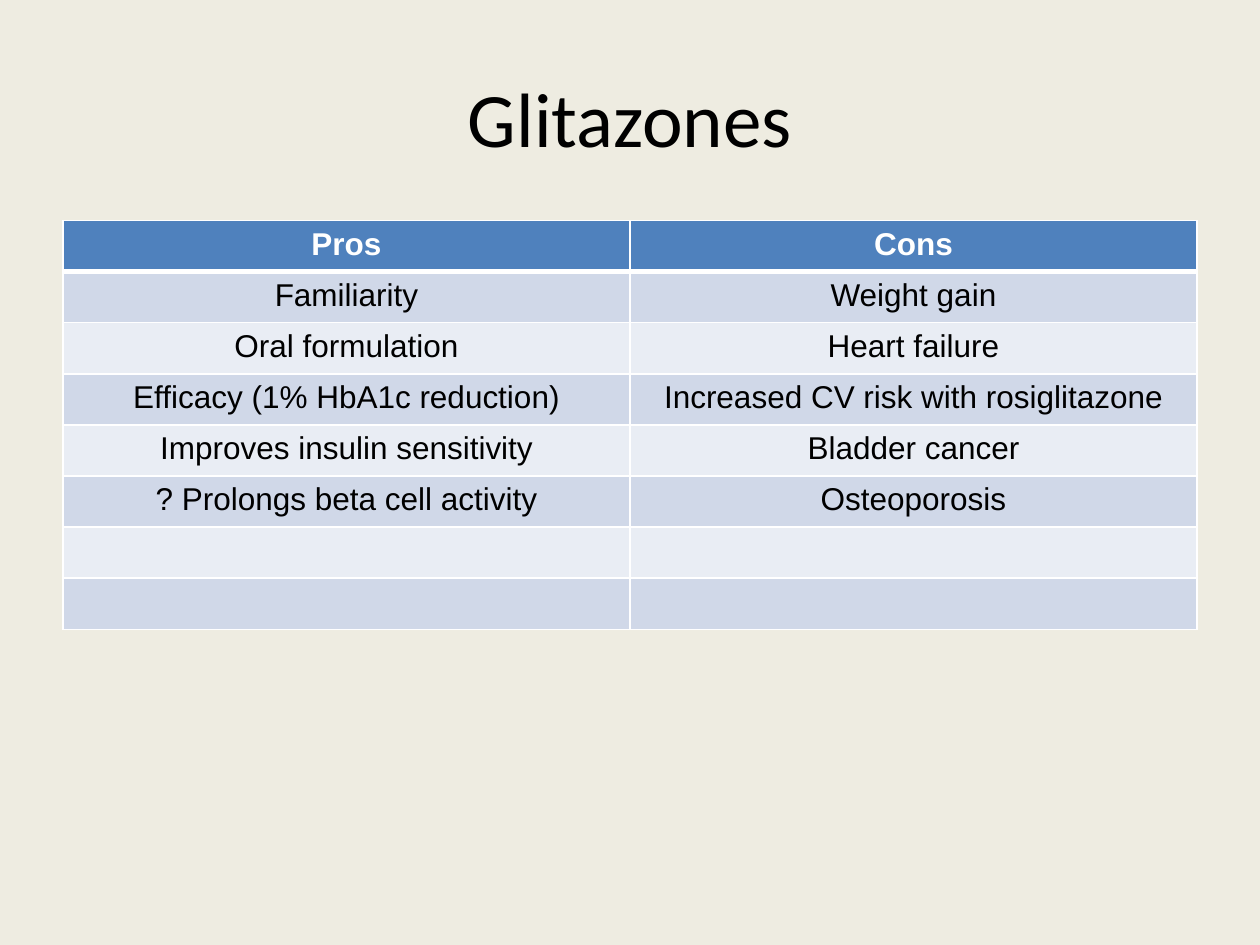
"""Build a slide weighing the pros and cons of glitazones."""
import pptx
import pptx.dml.color
import pptx.enum.text
import pptx.oxml
import pptx.oxml.ns
import pptx.util

Pt = pptx.util.Pt
RGBColor = pptx.dml.color.RGBColor

CREAM = RGBColor(0xEE, 0xEC, 0xE1)
BLACK = RGBColor(0x00, 0x00, 0x00)
WHITE = RGBColor(0xFF, 0xFF, 0xFF)
HEADER_BLUE = RGBColor(0x4F, 0x81, 0xBD)
BANDS = (RGBColor(0xD0, 0xD8, 0xE8), RGBColor(0xE9, 0xED, 0xF4))

TITLE_FONT = {"name": "Calibri", "size": Pt(44), "bold": False}
HEADER_FONT = {"name": "Arial", "size": Pt(18), "bold": True}
BODY_FONT = {**HEADER_FONT, "bold": False}

ROW_HEIGHT = 29.2
COLUMN_WIDTH = 324
ARGUMENTS = [
    ("Pros", "Cons"),
    ("Familiarity", "Weight gain"),
    ("Oral formulation", "Heart failure"),
    ("Efficacy (1% HbA1c reduction)", "Increased CV risk with rosiglitazone"),
    ("Improves insulin sensitivity", "Bladder cancer"),
    ("? Prolongs beta cell activity", "Osteoporosis"),
    ("", ""),
    ("", ""),
]


def write_centred(frame, wording, font_format, color):
    paragraph = frame.paragraphs[0]
    paragraph.alignment = pptx.enum.text.PP_ALIGN.CENTER
    if wording:
        run = paragraph.add_run()
        run.text = wording
        for attribute, value in font_format.items():
            setattr(run.font, attribute, value)
        run.font.color.rgb = color


def add_title(slide, wording):
    frame = slide.shapes.add_textbox(Pt(36), Pt(21.6), Pt(648), Pt(90)).text_frame
    frame.word_wrap = True
    frame.vertical_anchor = pptx.enum.text.MSO_ANCHOR.MIDDLE
    write_centred(frame, wording, TITLE_FONT, BLACK)


def add_borders(cell, widths):
    properties = cell._tc.get_or_add_tcPr()
    for side, width in widths.items():
        properties.append(pptx.oxml.parse_xml(
            f'<a:ln{side} {pptx.oxml.ns.nsdecls("a")} w="{Pt(width)}">'
            f'<a:solidFill><a:srgbClr val="{WHITE}"/></a:solidFill></a:ln{side}>'
        ))


def style_cell(cell, wording, row):
    is_header = row == 0
    add_borders(cell, {"L": 1, "R": 1, "T": 3 if row == 1 else 1, "B": 3 if is_header else 1})
    cell.fill.solid()
    cell.fill.fore_color.rgb = HEADER_BLUE if is_header else BANDS[(row - 1) % 2]
    font_format, color = (HEADER_FONT, WHITE) if is_header else (BODY_FONT, BLACK)
    write_centred(cell.text_frame, wording, font_format, color)


def add_arguments_table(slide, arguments):
    rows, columns = len(arguments), len(arguments[0])
    table = slide.shapes.add_table(
        rows, columns, Pt(36), Pt(126), Pt(columns * COLUMN_WIDTH), Pt(rows * ROW_HEIGHT)
    ).table
    for row, wordings in enumerate(arguments):
        table.rows[row].height = Pt(ROW_HEIGHT)
        for column, wording in enumerate(wordings):
            style_cell(table.cell(row, column), wording, row)


def main():
    deck = pptx.Presentation()
    deck.slide_width, deck.slide_height = Pt(720), Pt(540)
    slide = deck.slides.add_slide(deck.slide_layouts[6])
    slide.background.fill.solid()
    slide.background.fill.fore_color.rgb = CREAM
    add_title(slide, "Glitazones")
    add_arguments_table(slide, ARGUMENTS)
    deck.save("out.pptx")


if __name__ == "__main__":
    main()
